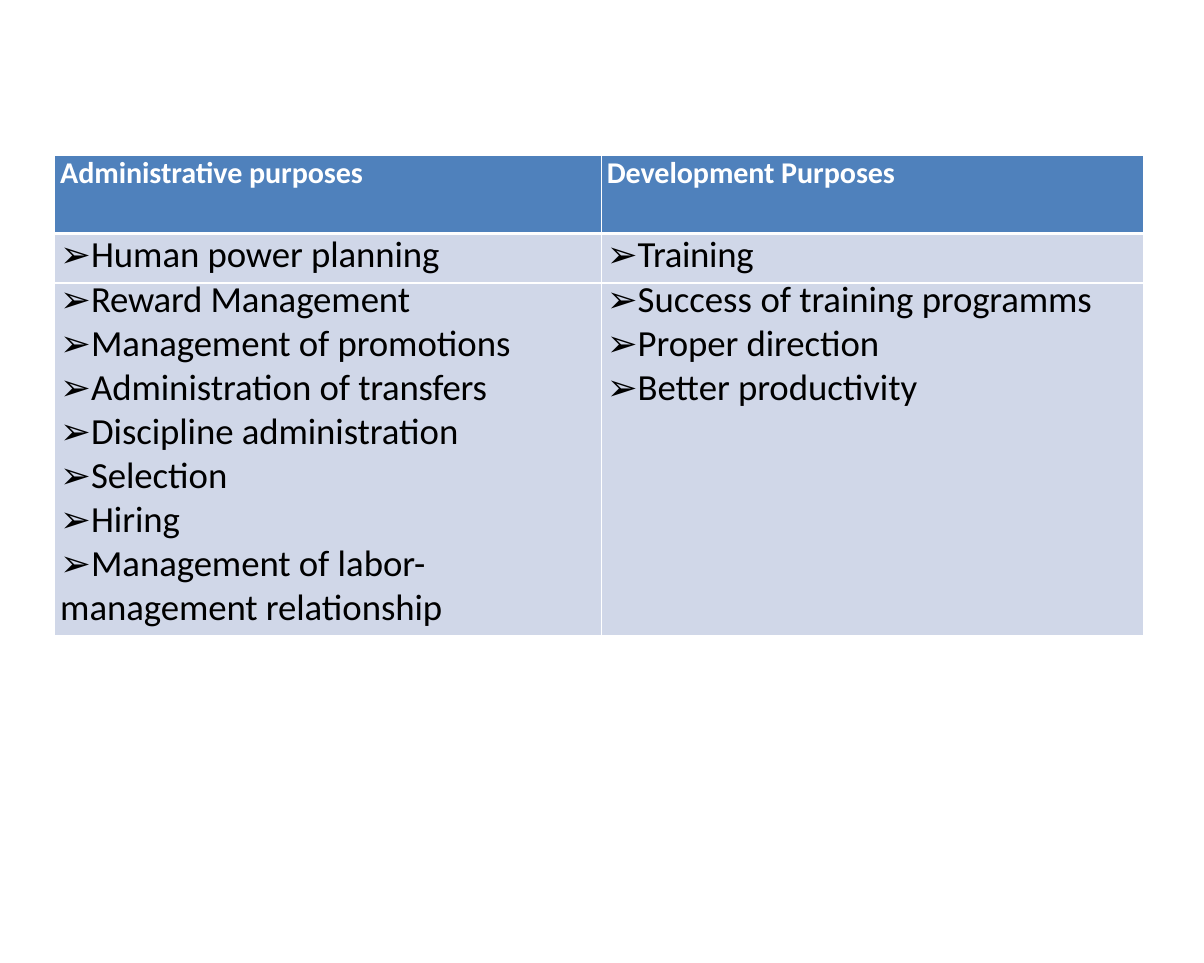
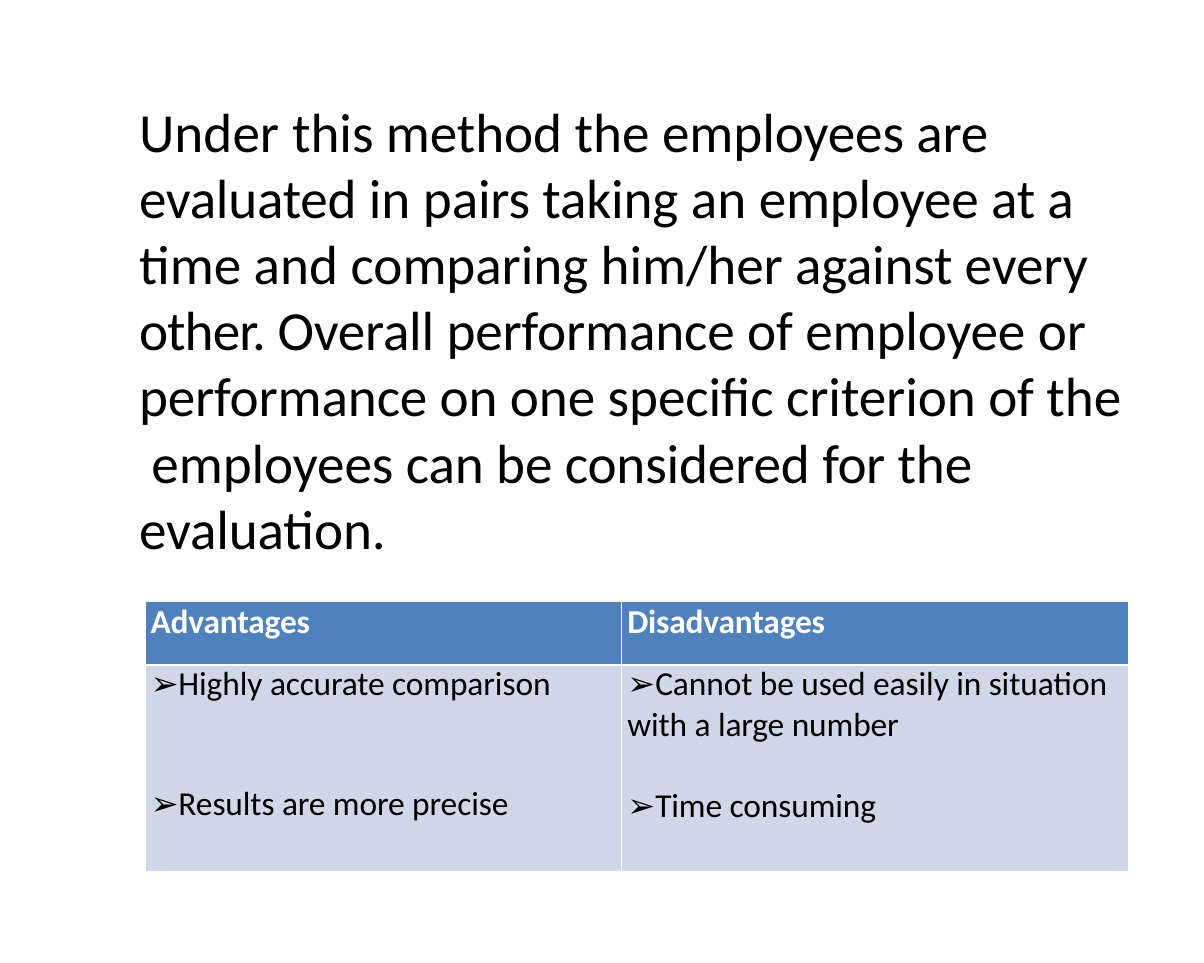
from dataclasses import dataclass

from pptx import Presentation
from pptx.dml.color import RGBColor
from pptx.enum.text import MSO_ANCHOR, MSO_AUTO_SIZE
from pptx.oxml.ns import qn
from pptx.util import Pt
from lxml import etree

PX = 9144  # 100 px to the inch
WHITE = RGBColor(0xFF, 0xFF, 0xFF)
BLACK = RGBColor(0x00, 0x00, 0x00)
HEADER_BLUE = RGBColor(0x4F, 0x81, 0xBC)
BODY_BLUE = RGBColor(0xD0, 0xD7, 0xE8)
TOP = MSO_ANCHOR.TOP
GROW = MSO_AUTO_SIZE.SHAPE_TO_FIT_TEXT
PLAIN_TABLE = "{2D5ABB26-0587-4C30-8999-92F81FD0307C}"
BULLET = "➢"
BREAK = "\n"


@dataclass
class Line:
    """One paragraph: spans are (text, letter spacing in points)."""
    spans: list
    size: float
    leading: float = 0
    before: float = 0
    indent: int = 9
    color: RGBColor = BLACK
    bold: bool = False


def header(text, size, spacing, before):
    return [Line([(text, spacing)], size, before=before, color=WHITE, bold=True)]


def bullet(spacing, *spans):
    return [(BULLET, spacing), *spans]


class Deck:
    def __init__(self, width, height):
        self.deck = Presentation()
        self.deck.slide_width = width * PX
        self.deck.slide_height = height * PX
        self.page = None

    def add_page(self):
        self.page = self.deck.slides.add_slide(self.deck.slide_layouts[6])

    def add_lines(self, frame, lines):
        for index, line in enumerate(lines):
            para = frame.add_paragraph() if index else frame.paragraphs[0]
            para._p.get_or_add_pPr().set("marL", str(line.indent * PX))
            para.space_before = Pt(line.before)
            if line.leading:
                para.line_spacing = Pt(line.leading)
            for text, spacing in line.spans:
                if text == BREAK:
                    para.add_line_break()
                    continue
                span = para.add_run()
                span.text = text
                span.font.name = "Arial" if text == BULLET else "Calibri"
                span.font.size = Pt(line.size)
                span.font.bold = line.bold
                span.font.color.rgb = line.color
                span._r.get_or_add_rPr().set("spc", str(round(spacing * 100)))

    def text(self, left, top, width, height, lines):
        box = self.page.shapes.add_textbox(left * PX, top * PX, width * PX, height * PX)
        frame = box.text_frame
        frame.word_wrap = True
        frame.auto_size = GROW
        frame.margin_left = frame.margin_right = 0
        frame.margin_top = frame.margin_bottom = 0
        self.add_lines(frame, lines)

    def border(self, cell, side, width):
        edge = etree.SubElement(cell._tc.get_or_add_tcPr(), qn(f"a:ln{side}"), w=str(Pt(width)))
        if not width:
            etree.SubElement(edge, qn("a:noFill"))
            return
        fill = etree.SubElement(edge, qn("a:solidFill"))
        etree.SubElement(fill, qn("a:srgbClr"), val=str(WHITE))

    def table(self, left, top, widths, heights, rules, rows):
        """rules: widths of the horizontal lines, from top to bottom."""
        frame = self.page.shapes.add_table(
            len(heights), len(widths), left * PX, top * PX,
            sum(widths) * PX, sum(heights) * PX)
        grid = frame.table
        grid._tbl.tblPr.find(qn("a:tableStyleId")).text = PLAIN_TABLE
        for column, width in zip(grid.columns, widths):
            column.width = width * PX
        for r, (height, cells) in enumerate(zip(heights, rows)):
            grid.rows[r].height = height * PX
            for c, lines in enumerate(cells):
                cell = grid.cell(r, c)
                cell.margin_left = cell.margin_right = 0
                cell.margin_top = cell.margin_bottom = 0
                cell.vertical_anchor = TOP
                for side, width in zip("LRTB", (1, 1, rules[r], rules[r + 1])):
                    self.border(cell, side, width)
                cell.fill.solid()
                cell.fill.fore_color.rgb = BODY_BLUE if r else HEADER_BLUE
                self.add_lines(cell.text_frame, lines)


def purposes_page(deck):
    deck.add_page()
    administrative = [
        bullet(-0.1, ("Human power planning", -0.1)),
        bullet(-0.3, ("Reward ", -0.3), ("Management", -0.1)),
        bullet(-0.1, ("Management of promotions", -0.1)),
        bullet(-0.1, ("Administration of ", -0.1), ("transfers", -0.3)),
        bullet(-0.1, ("Discipline administration", -0.1)),
        bullet(-0.1, ("Selection", -0.1)),
        bullet(-0.1, ("Hiring", -0.1)),
        bullet(-0.1, ("Management of ", -0.1), ("labor-", 0)),
        [("management relationship", -0.1)],
    ]
    development = [
        bullet(-0.4, ("Training", -0.4)),
        bullet(0, ("Success ", 0), ("of training ", -0.1), ("programms", -0.2)),
        bullet(-0.1, ("Proper direction", -0.1)),
        bullet(-0.2, ("Better ", -0.2), ("productivity", -0.1)),
    ]
    development += [None] * (len(administrative) - len(development))
    leadings = [52.1] + [47.5] * 7 + [46.2]
    rows = [[header("Administrative purposes", 36, -0.1, 0.8),
             header("Development Purposes", 36, -0.1, 0.8)]]
    for leading, *pair in zip(leadings, administrative, development):
        rows.append([[Line(spans, 44, leading)] if spans else [] for spans in pair])
    deck.table(91, 258, [908, 900], [130, 82] + [73] * 6 + [75, 73],
               [1, 3, 3] + [0] * 7 + [1], rows)


def comparison_page(deck):
    deck.add_page()

    # Description of the method
    passage = [
        ("Under ", 0.1), ("this method ", -0.1), ("the ", 0), ("employees ", -0.1),
        ("are evaluated ", -0.3), ("in ", 0), ("pairs taking ", -0.2), ("an ", 0),
        ("employee ", -0.2), ("at ", -0.3), ("a time and ", 0),
        ("comparing him/her ", -0.1), ("against ", -0.3), ("every ", -0.1),
        ("other. ", -1.1), ("Overall ", -0.3), ("performance ", -0.2), ("of ", -0.1),
        ("employee ", -0.2), ("or ", -0.1), ("performance ", -0.2),
        ("on one specific criterion of ", -0.1), ("the", 0), (BREAK, 0),
        (" employees ", -0.1), ("can ", -0.2), ("be ", -0.1), ("considered ", -0.2),
        ("for ", -0.5), ("the ", 0), ("evaluation.", -0.2),
    ]
    deck.text(230, 161, 1641, 776, [Line(passage, 66, indent=1)])

    # Advantages and disadvantages
    advantages = [
        Line(bullet(-0.1, ("Highly ", -0.1), ("accurate ", -0.2), ("comparison", -0.1)),
             40, leading=47.6),
        Line(bullet(-0.1, ("Results ", -0.1), ("are ", -0.2), ("more precise", -0.1)),
             40, before=94),
    ]
    disadvantages = [
        Line(bullet(-0.1, ("Cannot be used easily in situation", -0.1)), 40, leading=47.6),
        Line([("with a ", -0.1), ("large ", -0.2), ("number", -0.1)], 40),
        Line(bullet(-0.1, ("Time consuming", -0.1)), 40, before=48),
    ]
    deck.table(241, 999, [792, 842], [106, 343], [1, 3, 1], [
        [header("Advantages", 40, -0.2, 0.6), header("Disadvantages", 40, -0.2, 0.6)],
        [advantages, disadvantages],
    ])


def main():
    deck = Deck(2000, 1600)
    purposes_page(deck)
    comparison_page(deck)
    deck.deck.save("out.pptx")


if __name__ == "__main__":
    main()
